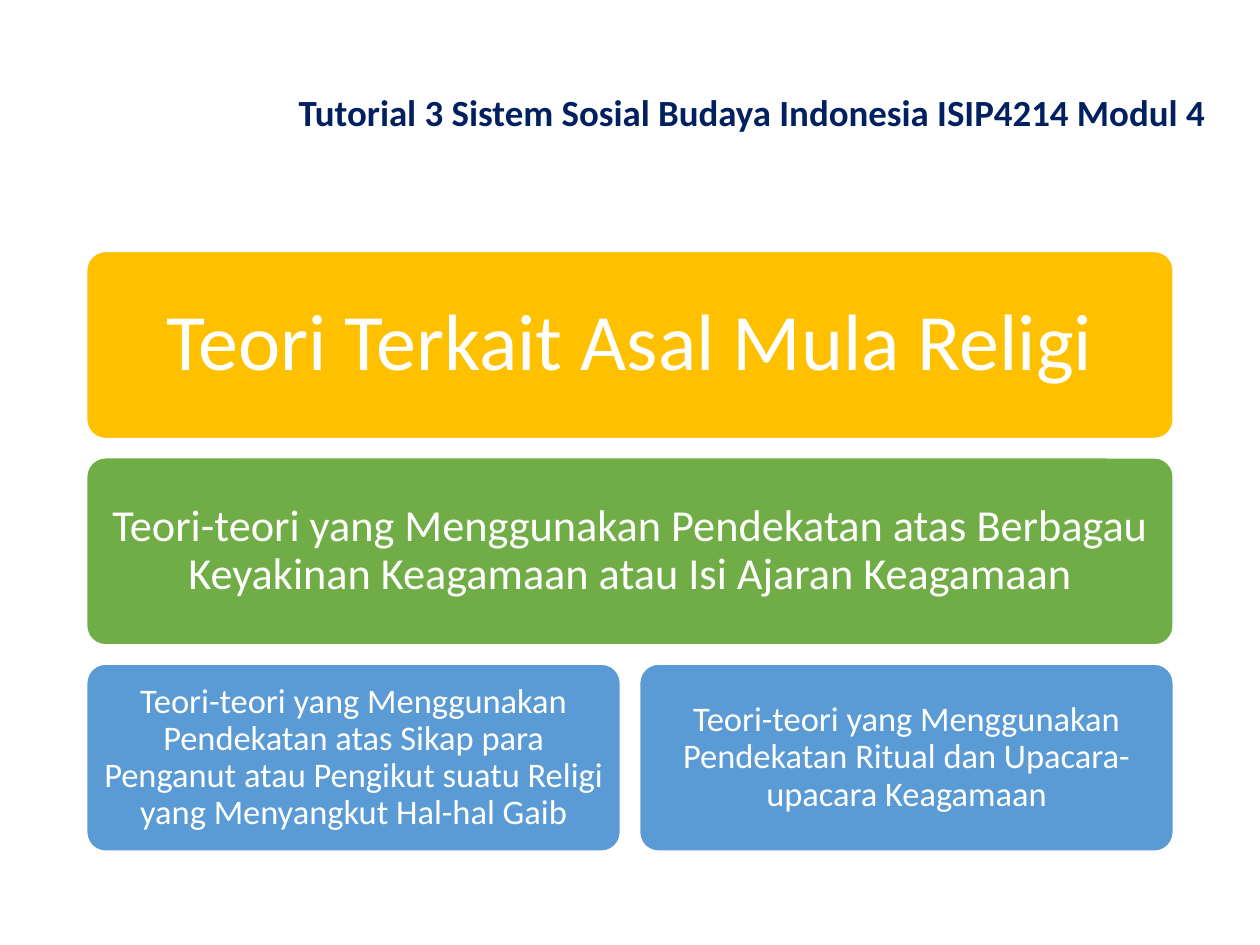
from pptx import Presentation
from pptx.dml.color import RGBColor
from pptx.enum.shapes import MSO_SHAPE
from pptx.enum.text import MSO_ANCHOR, PP_ALIGN
from pptx.util import Inches, Pt

ROUNDED = MSO_SHAPE.ROUNDED_RECTANGLE
MIDDLE = MSO_ANCHOR.MIDDLE
LEFT, CENTER = PP_ALIGN.LEFT, PP_ALIGN.CENTER

SLIDE_WIDTH, SLIDE_HEIGHT = 14.22, 10.67

# Grid of the theory boxes, in inches
GRID_LEFT, GRID_TOP = 0.98, 2.84
COLUMN_WIDTH, ROW_HEIGHT = 6.02, 2.11
COLUMN_GAP, ROW_GAP = 0.22, 0.22

# Row, column, column span, fill, text size, inset, text
THEORIES = [
    (0, 0, 2, "FFC000", 65, 0.27, "Teori Terkait Asal Mula Religi"),
    (1, 0, 2, "70AD47", 36, 0.15,
     "Teori-teori yang Menggunakan Pendekatan atas Berbagau "
     "Keyakinan Keagamaan atau Isi Ajaran Keagamaan"),
    (2, 0, 1, "5B9BD5", 28, 0.12,
     "Teori-teori yang Menggunakan Pendekatan atas Sikap para "
     "Penganut atau Pengikut suatu Religi yang Menyangkut Hal-hal Gaib"),
    (2, 1, 1, "5B9BD5", 28, 0.12,
     "Teori-teori yang Menggunakan Pendekatan Ritual dan "
     "Upacara-upacara Keagamaan"),
]


def color(hex_string):
    return RGBColor.from_string(hex_string)


def write_text(shape, text, alignment, inset, size, text_color, bold=False):
    frame = shape.text_frame
    frame_format = {"word_wrap": True, "vertical_anchor": MIDDLE}
    for side in ("left", "top", "right", "bottom"):
        frame_format[f"margin_{side}"] = Inches(inset)
    for name, value in frame_format.items():
        setattr(frame, name, value)

    paragraph = frame.paragraphs[0]
    paragraph.text = text
    paragraph.alignment = alignment
    paragraph.line_spacing = 0.9
    font_format = {"name": "Calibri", "size": Pt(size), "bold": bold}
    for name, value in font_format.items():
        setattr(paragraph.font, name, value)
    paragraph.font.color.rgb = color(text_color)


def add_title(slide, text):
    left, top = 0.23 * SLIDE_WIDTH, 0.063 * SLIDE_HEIGHT
    title = slide.shapes.add_textbox(
        Inches(left), Inches(top), Inches(SLIDE_WIDTH - left), Inches(1.25))
    write_text(title, text, LEFT, 0.1, 30, "002060", bold=True)


def add_theory(slide, row, column, span, fill, size, inset, text):
    left = GRID_LEFT + column * (COLUMN_WIDTH + COLUMN_GAP)
    top = GRID_TOP + row * (ROW_HEIGHT + ROW_GAP)
    width = span * COLUMN_WIDTH + (span - 1) * COLUMN_GAP
    box = slide.shapes.add_shape(
        ROUNDED, Inches(left), Inches(top), Inches(width), Inches(ROW_HEIGHT))
    box.adjustments[0] = 0.1
    box.shadow.inherit = False
    box.fill.solid()
    box.fill.fore_color.rgb = color(fill)
    box.line.color.rgb = color("FFFFFF")
    box.line.width = Pt(1)
    write_text(box, text, CENTER, inset, size, "FFFFFF")


def main():
    presentation = Presentation()
    presentation.slide_width = Inches(SLIDE_WIDTH)
    presentation.slide_height = Inches(SLIDE_HEIGHT)
    slide = presentation.slides.add_slide(presentation.slide_layouts[6])

    # Theory boxes
    for theory in THEORIES:
        add_theory(slide, *theory)

    # Heading
    add_title(slide, "Tutorial 3 Sistem Sosial Budaya Indonesia ISIP4214 Modul 4")

    presentation.save("out.pptx")


if __name__ == "__main__":
    main()
